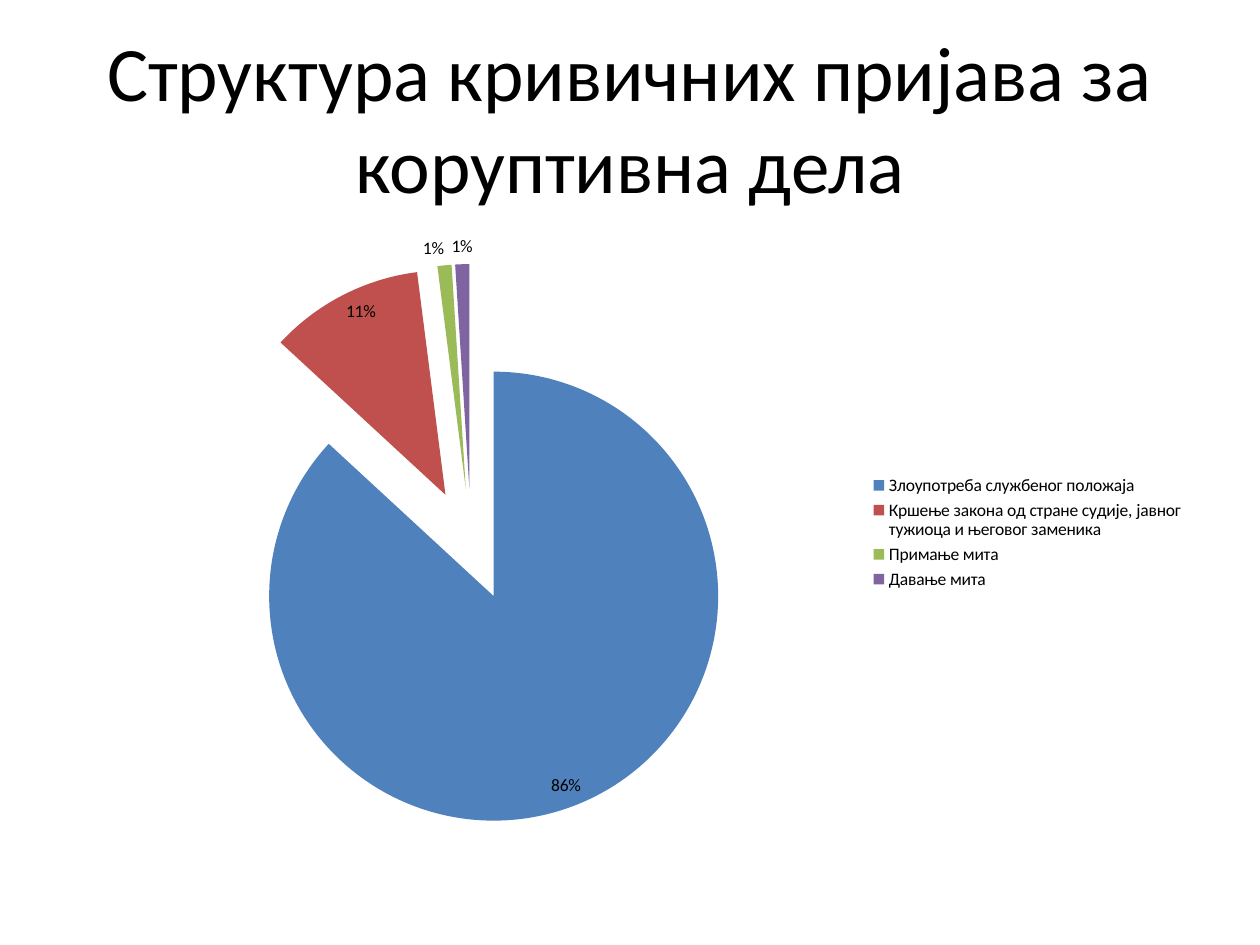
from lxml import etree
from pptx import Presentation
from pptx import util as u
from pptx.chart.data import CategoryChartData
from pptx.dml.color import RGBColor
from pptx.enum import chart as ch, text
from pptx.oxml.ns import qn

# Content
TITLE = "Структура кривичних пријава за коруптивна дела"
INSIDE = ch.XL_LABEL_POSITION.INSIDE_END
OUTSIDE = ch.XL_LABEL_POSITION.OUTSIDE_END
SLICES = [  # category, percent, colour, label position
    ("Злоупотреба службеног положаја", 86, "4F81BD", INSIDE),
    ("Кршење закона од стране судије, јавног тужиоца и његовог заменика",
     11, "C0504D", INSIDE),
    ("Примање мита", 1, "9BBB59", OUTSIDE),
    ("Давање мита", 1, "8064A2", OUTSIDE),
]
EXPLOSION = 25
PLOT = {"x": 0.11, "y": 0.07, "w": 0.5, "h": 0.9}  # shares of the chart
FONT, BLACK = "Calibri", "000000"

# Slide and the column shared by title and chart
W, H = 10, 7.5
MARGIN = W * 0.05
COLUMN = W - 2 * MARGIN


def style(font, size):
    font.name, font.size = FONT, u.Pt(size)
    font.color.rgb = RGBColor.from_string(BLACK)


def box(top, height):
    return [u.Inches(v) for v in (MARGIN, top, COLUMN, height)]


def add_child(parent, tag, val=None):
    el = etree.SubElement(parent, qn(tag))
    if val is not None:
        el.set("val", str(val))
    return el


prs = Presentation()
prs.slide_width, prs.slide_height = u.Inches(W), u.Inches(H)
slide = prs.slides.add_slide(prs.slide_layouts[6])

# Title
tf = slide.shapes.add_textbox(*box(H * 0.04, H / 6)).text_frame
tf.word_wrap = True
tf.vertical_anchor = text.MSO_ANCHOR.MIDDLE
p = tf.paragraphs[0]
p.text, p.alignment = TITLE, text.PP_ALIGN.CENTER
style(p.font, 44)

# Pie chart
data = CategoryChartData(number_format='0"%"')
data.categories = [name for name, *_ in SLICES]
data.add_series("Series 1", [value for _, value, *_ in SLICES])
chart = slide.shapes.add_chart(
    ch.XL_CHART_TYPE.PIE, *box(1.75, H * 0.66), data).chart
style(chart.font, 10)
chart.has_title = False
chart.has_legend = True
chart.legend.position = ch.XL_LEGEND_POSITION.RIGHT
chart.legend.include_in_layout = False

plot = chart.plots[0]
plot.vary_by_categories = True
plot.has_data_labels = True
plot.data_labels.show_value = True
series = plot.series[0]
for i, (_, _, colour, position) in enumerate(SLICES):
    point = series.points[i]
    point.format.fill.solid()
    point.format.fill.fore_color.rgb = RGBColor.from_string(colour)
    point.data_label.position = position

# Pull the slices apart
explosion = etree.Element(qn("c:explosion"), val=str(EXPLOSION))
series._element.find(qn("c:dPt")).addprevious(explosion)

# Fixed place for the pie
area = plot._element.getparent()
for old in area.findall(qn("c:layout")):
    area.remove(old)
layout = etree.Element(qn("c:layout"))
area.insert(0, layout)
manual = add_child(layout, "c:manualLayout")
add_child(manual, "c:layoutTarget", "inner")
for key in "xy":
    add_child(manual, f"c:{key}Mode", "edge")
for key, share in PLOT.items():
    add_child(manual, f"c:{key}", share)

prs.save("out.pptx")
